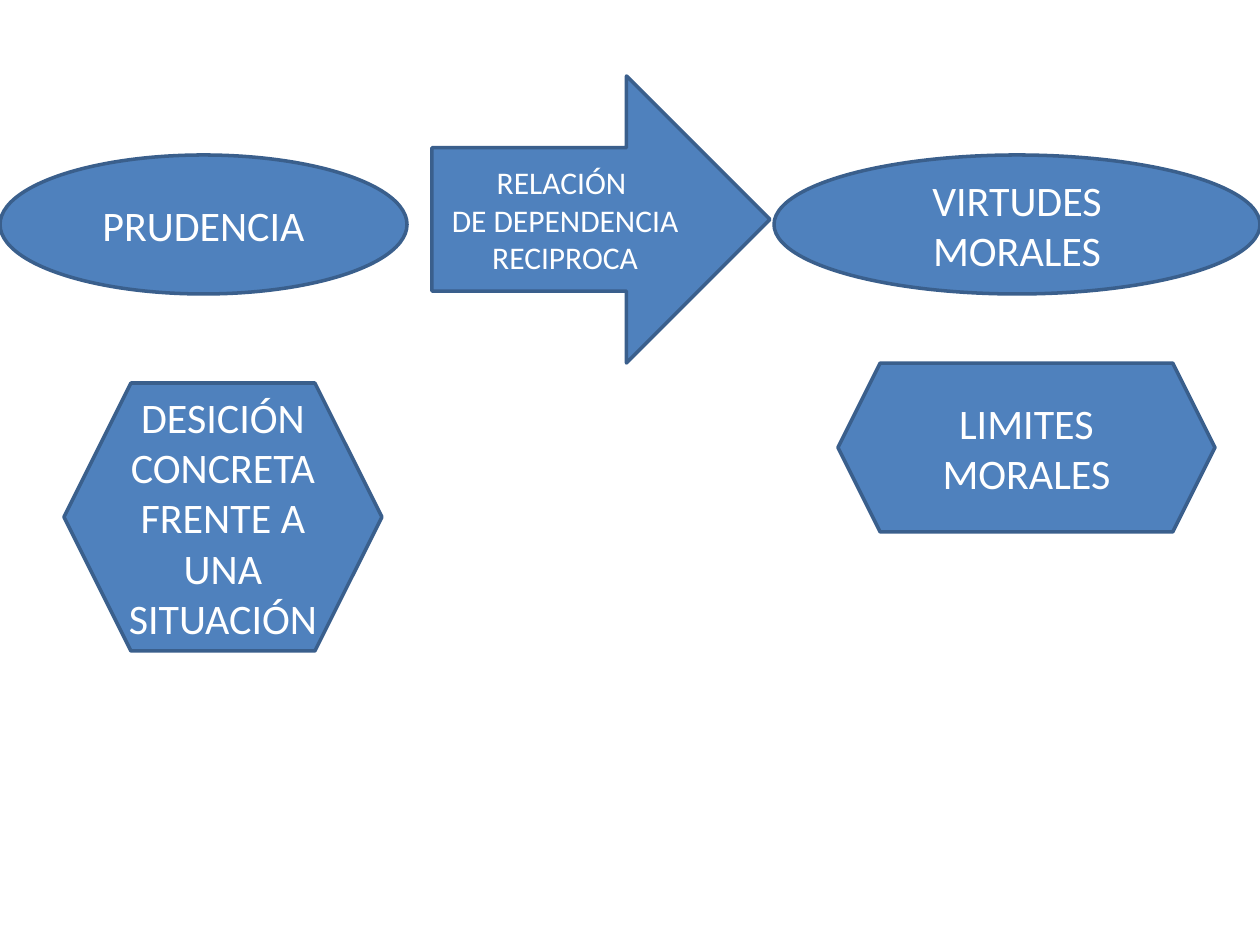
from dataclasses import dataclass

from pptx import Presentation
from pptx.dml.color import RGBColor
from pptx.enum.shapes import MSO_SHAPE as Geometry
from pptx.enum.text import MSO_ANCHOR as Anchor, PP_ALIGN as Align
from pptx.slide import Slide
from pptx.util import Emu, Pt

PX_PER_INCH = 126


@dataclass(frozen=True)
class Theme:
    font: str = "Calibri"
    fill: RGBColor = RGBColor(0x4F, 0x81, 0xBD)
    outline: RGBColor = RGBColor(0x3A, 0x5F, 0x8C)
    text: RGBColor = RGBColor(0xFF, 0xFF, 0xFF)
    outline_width: int = 2
    concept_size: int = 24
    relation_size: int = 18


THEME = Theme()


@dataclass(frozen=True)
class Concept:
    geometry: Geometry
    left: int
    top: int
    width: int
    height: int
    lines: tuple[str, ...]
    size: int = THEME.concept_size


def px(length: int) -> Emu:
    return Emu(round(length * 914400 / PX_PER_INCH))


def draw_concept(slide: Slide, concept: Concept) -> None:
    shape = slide.shapes.add_shape(
        concept.geometry,
        px(concept.left), px(concept.top), px(concept.width), px(concept.height),
    )
    shape.shadow.inherit = False
    shape.fill.solid()
    shape.fill.fore_color.rgb = THEME.fill
    shape.line.color.rgb = THEME.outline
    shape.line.width = Pt(THEME.outline_width)

    frame = shape.text_frame
    frame.word_wrap = True
    frame.vertical_anchor = Anchor.MIDDLE
    for index, line in enumerate(concept.lines):
        paragraph = frame.add_paragraph() if index else frame.paragraphs[0]
        paragraph.alignment = Align.CENTER
        run = paragraph.add_run()
        run.text = line
        run.font.name = THEME.font
        run.font.size = Pt(concept.size)
        run.font.color.rgb = THEME.text


CONCEPTS = (
    # The two related ideas
    Concept(Geometry.OVAL, 0, 155, 407, 139, ("PRUDENCIA",)),
    Concept(Geometry.OVAL, 774, 155, 486, 139, ("VIRTUDES MORALES",)),
    # The relation between them
    Concept(Geometry.RIGHT_ARROW, 432, 76, 338, 287,
            ("RELACIÓN ", "DE DEPENDENCIA RECIPROCA"), THEME.relation_size),
    # What each idea leads to
    Concept(Geometry.HEXAGON, 64, 383, 318, 268,
            ("DESICIÓN CONCRETA FRENTE A UNA SITUACIÓN",)),
    Concept(Geometry.HEXAGON, 838, 363, 377, 169, ("LIMITES MORALES",)),
)


def main() -> None:
    presentation = Presentation()
    presentation.slide_width = px(1260)
    presentation.slide_height = px(945)
    blank_layout = presentation.slide_layouts[6]
    slide = presentation.slides.add_slide(blank_layout)
    for concept in CONCEPTS:
        draw_concept(slide, concept)
    presentation.save("out.pptx")


if __name__ == "__main__":
    main()
